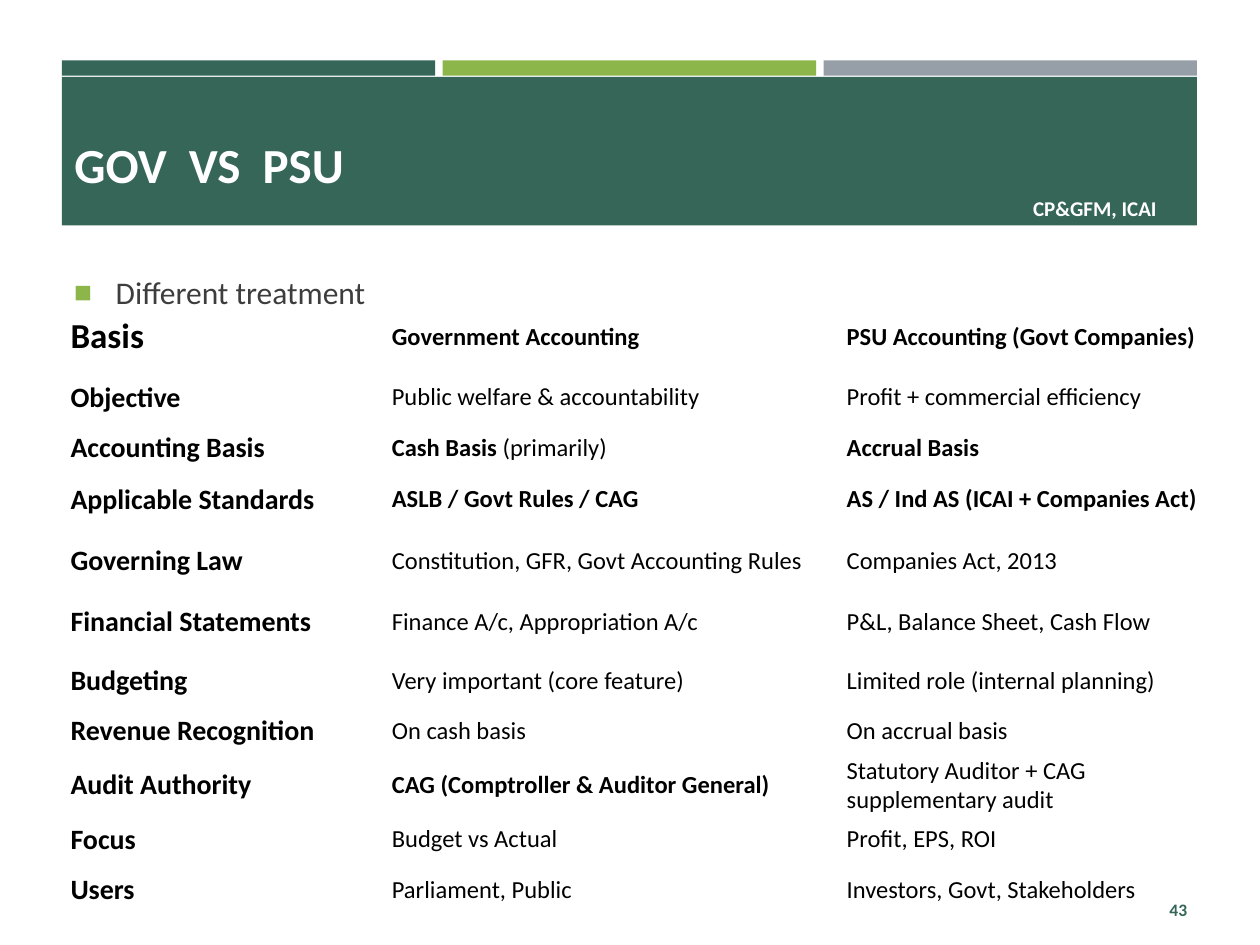
from dataclasses import dataclass

from lxml.etree import SubElement
from pptx import Presentation
from pptx.dml.color import RGBColor
from pptx.enum.shapes import MSO_SHAPE as Shape
from pptx.enum.text import MSO_ANCHOR as Anchor, MSO_AUTO_SIZE as AutoSize, PP_ALIGN as Align
from pptx.oxml.ns import qn
from pptx.util import Inches, Pt


@dataclass(frozen=True)
class Theme:
    font: str = "Calibri"
    green: str = "366658"
    lime: str = "8CB64A"
    grey: str = "969FA7"
    white: str = "FFFFFF"
    body: str = "3D3D3D"
    black: str = "000000"
    title_size: int = 28
    corner_size: int = 20
    lead_size: int = 18
    basis_size: int = 16
    cell_size: int = 14
    tag_size: int = 12
    number_size: int = 10


theme = Theme()
PLAIN_TABLE_STYLE = "{2D5ABB26-0587-4C30-8999-92F81FD0307C}"  # no fill, no grid


def write(frame, text, size, color, bold=True, align=Align.LEFT, anchor=Anchor.MIDDLE, bullet=None):
    """Fill a frame with one paragraph; in the text, a bar ends the bold part."""
    frame.word_wrap = True
    frame.vertical_anchor = anchor
    paragraph = frame.paragraphs[0]
    paragraph.alignment = align
    if bullet:
        props = paragraph._p.get_or_add_pPr()
        props.set("marL", str(Inches(0.33)))
        props.set("indent", str(-Inches(0.33)))
        SubElement(SubElement(props, qn("a:buClr")), qn("a:srgbClr"), val=theme.lime)
        SubElement(props, qn("a:buSzPct"), val="60000")
        SubElement(props, qn("a:buFont"), typeface=theme.font)
        SubElement(props, qn("a:buChar"), char=bullet)
    strong, _, plain = text.partition("|")
    for part, is_bold in ((strong, bold), (plain, False)):
        if part:
            run = paragraph.add_run()
            run.text = part
            run.font.name = theme.font
            run.font.size = Pt(size)
            run.font.bold = is_bold
            run.font.color.rgb = RGBColor.from_string(color)


def add_block(left, top, width, height, color):
    block = slide.shapes.add_shape(
        Shape.RECTANGLE, Inches(left), Inches(top), Inches(width), Inches(height))
    block.fill.solid()
    block.fill.fore_color.rgb = RGBColor.from_string(color)
    block.line.fill.background()
    block.shadow.inherit = False
    return block


deck = Presentation()
deck.slide_width, deck.slide_height = Inches(10), Inches(7.5)
slide = deck.slides.add_slide(deck.slide_layouts[5])

# Header: three strips over a band
margin, content_width, gap = 0.49, 9.01, 0.06
strip_width = (content_width - 2 * gap) / 3
for column, strip_color in enumerate((theme.green, theme.lime, theme.grey)):
    add_block(margin + column * (strip_width + gap), 0.48, strip_width, 0.12, strip_color)
add_block(margin, 0.61, content_width, 1.18, theme.green)
course_tag = add_block(7.99, 1.56, 1.4, 0.18, theme.green)
write(course_tag.text_frame, "CP&GFM, ICAI", theme.tag_size, theme.white, align=Align.CENTER)

title = slide.shapes.title
title.left, title.top = Inches(margin), Inches(0.75)
title.width, title.height = Inches(7.79), Inches(1.1)
title.text_frame.auto_size = AutoSize.NONE
write(title.text_frame, "GOV  VS  PSU", theme.title_size, theme.white)
title.element.getparent().append(title.element)  # in front of the band

lead = slide.shapes.add_textbox(
    Inches(margin), Inches(2.12), Inches(content_width), Inches(4.82))
write(lead.text_frame, "Different treatment", theme.lead_size, theme.body, bold=False,
      align=Align.JUSTIFY, anchor=Anchor.TOP, bullet="■")
lead.text_frame.paragraphs[0].space_after = Pt(6)

page_number = slide.shapes.add_textbox(Inches(8.68), Inches(7.02), Inches(0.84), Inches(0.4))
write(page_number.text_frame, "43", theme.number_size, theme.green, align=Align.RIGHT)

# Comparison: row height, basis, government, PSU
short, medium, tall, two_line = 0.33, 0.47, 0.49, 0.53
comparison = [
    (tall, "Basis", "Government Accounting", "PSU Accounting (Govt Companies)"),
    (medium, "Objective", "|Public welfare & accountability", "|Profit + commercial efficiency"),
    (short, "Accounting Basis", "Cash Basis| (primarily)", "Accrual Basis"),
    (tall, "Applicable Standards", "ASLB / Govt Rules / CAG", "AS / Ind AS (ICAI + Companies Act)"),
    (tall, "Governing Law", "|Constitution, GFR, Govt Accounting Rules", "|Companies Act, 2013"),
    (medium, "Financial Statements", "|Finance A/c, Appropriation A/c", "|P&L, Balance Sheet, Cash Flow"),
    (medium, "Budgeting", "|Very important (core feature)", "|Limited role (internal planning)"),
    (short, "Revenue Recognition", "|On cash basis", "|On accrual basis"),
    (two_line, "Audit Authority", "CAG (Comptroller & Auditor General)",
     "|Statutory Auditor + CAG supplementary audit"),
    (short, "Focus", "|Budget vs Actual", "|Profit, EPS, ROI"),
    (medium, "Users", "|Parliament, Public", "|Investors, Govt, Stakeholders"),
]
column_widths = (2.55, 3.61, 3.08)
table = slide.shapes.add_table(
    len(comparison), len(column_widths), Inches(0.5), Inches(2.43),
    Inches(sum(column_widths)), Inches(sum(entry[0] for entry in comparison))).table
table.first_row = table.horz_banding = False
table._tbl.tblPr.find(qn("a:tableStyleId")).text = PLAIN_TABLE_STYLE
for column, width in zip(table.columns, column_widths):
    column.width = Inches(width)
for r, (row_height, *texts) in enumerate(comparison):
    table.rows[r].height = Inches(row_height)
    for c, text in enumerate(texts):
        cell = table.cell(r, c)
        cell.fill.background()
        cell.margin_left = cell.margin_right = Inches(0.06)
        cell.margin_top = cell.margin_bottom = Inches(0.03)
        cell.vertical_anchor = Anchor.MIDDLE
        basis_size = theme.corner_size if r == 0 else theme.basis_size
        write(cell.text_frame, text, theme.cell_size if c else basis_size, theme.black)

deck.save("out.pptx")
